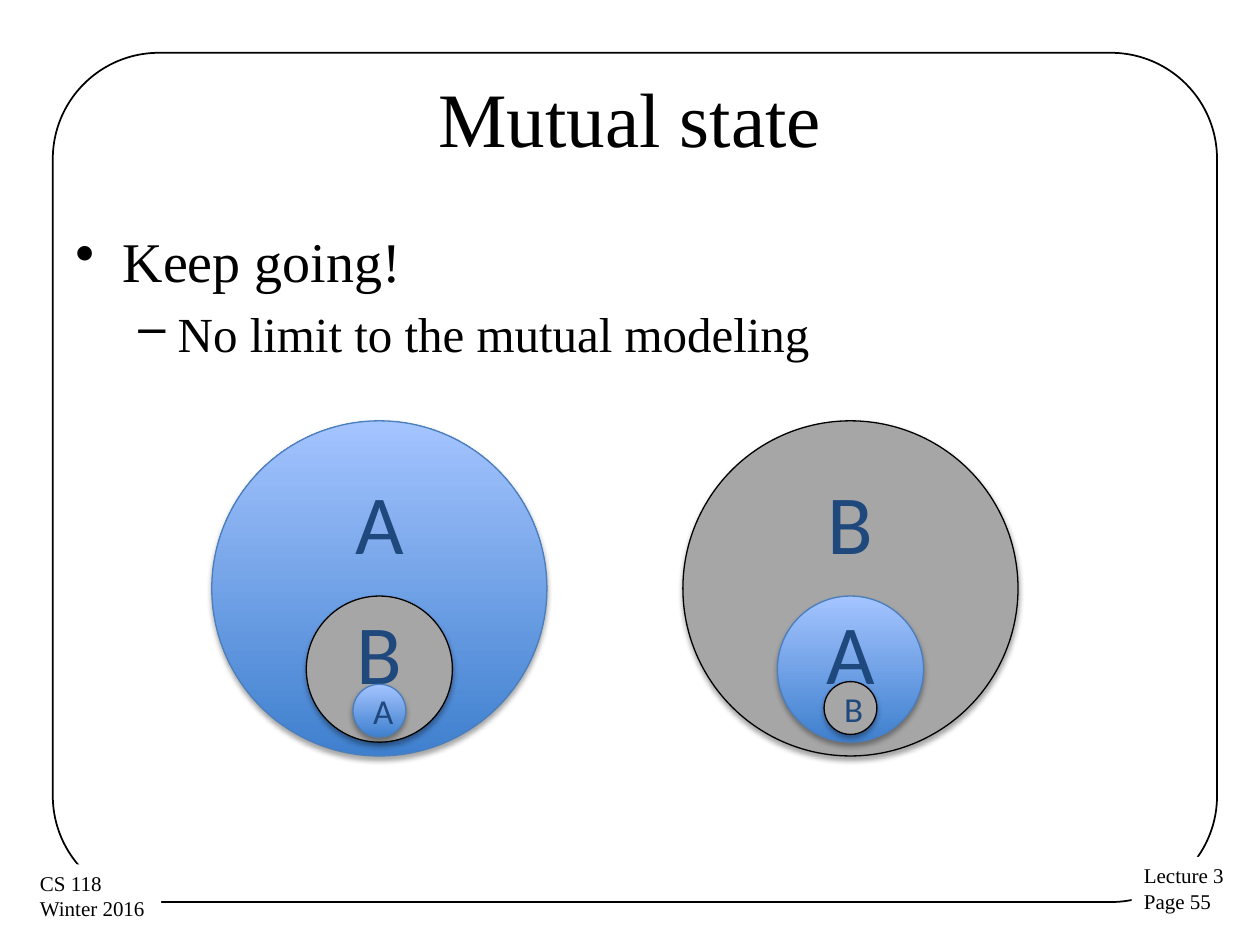
"""Build the "Mutual state" slide with nested models of A and B."""
import pptx
import pptx.util
import pptx.dml.color
import pptx.enum.shapes
import pptx.enum.text
import lxml.etree

Pt = pptx.util.Pt
Shapes = pptx.enum.shapes.MSO_SHAPE
Align = pptx.enum.text.PP_ALIGN
Anchor = pptx.enum.text.MSO_ANCHOR
NAMESPACE = "http://schemas.openxmlformats.org/drawingml/2006/main"

THEME = {
    "serif": "Times New Roman", "sans": "Calibri",
    "black": "000000", "white": "FFFFFF", "letter": "1F497D",
    "title": 44, "footer": 12,
    "A": {"fill": ("3F80CE", "A4C4FF"), "line": "4B7EBC"},
    "B": {"fill": ("A6A6A6",), "line": "000000"},
}
TITLE = "Mutual state"
BULLETS = [
    {"text": "Keep going!", "mark": "•", "size": 32, "left": 27, "hang": 27, "before": 0},
    {"text": "No limit to the mutual modeling", "mark": "–", "size": 28,
     "left": 58.5, "hang": 22.5, "before": 5.6},
]
FOOTERS = [
    (("Lecture 3", "Page 55"), (646.6, 489.6, 60.5, 36.7)),
    (("CS 118", "Winter 2016"), (15.8, 493.9, 76.3, 36.7)),
]
COLUMNS = [(216.8, "ABA"), (486, "BAB")]
LEVELS = [
    {"diameter": 191.5, "tops": (240.5, 240.5), "size": 48, "insets": (0, 77)},
    {"diameter": 83.5, "tops": (340.6, 340.6), "size": 48, "insets": (0, 21)},
    {"diameter": 30.2, "tops": (391, 389.5), "size": 20, "insets": (3.6, 3.6)},
]


def color(name):
    return pptx.dml.color.RGBColor.from_string(THEME.get(name, name))


def write(paragraph, text, size, font="serif", ink="black", align=Align.LEFT, before=0):
    paragraph.text = text
    paragraph.alignment = align
    paragraph.space_before = Pt(before)
    paragraph.font.size = Pt(size)
    paragraph.font.name = THEME[font]
    paragraph.font.color.rgb = color(ink)


def place(shape, left, top, width, height):
    shape.left, shape.top, shape.width, shape.height = map(Pt, (left, top, width, height))


def add_shape(slide, kind, box, fill=(), line=None, weight=0.75):
    shape = slide.shapes.add_shape(kind, *map(Pt, box))
    shape.shadow.inherit = False
    if len(fill) == 2:
        shape.fill.gradient()
        shape.fill.gradient_angle = 90
        for stop, position, name in zip(shape.fill.gradient_stops, (0, 1), fill):
            stop.position = position
            stop.color.rgb = color(name)
    elif fill:
        shape.fill.solid()
        shape.fill.fore_color.rgb = color(fill[0])
    else:
        shape.fill.background()
    if line:
        shape.line.color.rgb = color(line)
        shape.line.width = Pt(weight)
    else:
        shape.line.fill.background()
    return shape


def add_shadow(shape):
    effects = shape.element.spPr.find(f"{{{NAMESPACE}}}effectLst")
    effects.append(lxml.etree.fromstring(
        f'<a:outerShdw xmlns:a="{NAMESPACE}" blurRad="{Pt(3.1)}" dist="{Pt(1.8)}" '
        'dir="5400000" rotWithShape="0"><a:srgbClr val="000000">'
        '<a:alpha val="35000"/></a:srgbClr></a:outerShdw>'))


def add_bullet(paragraph, mark, left, hang):
    properties = paragraph._p.get_or_add_pPr()
    properties.set("marL", str(Pt(left)))
    properties.set("indent", str(-Pt(hang)))
    lxml.etree.SubElement(properties, f"{{{NAMESPACE}}}buChar", char=mark)


def add_frame(slide):
    frame = add_shape(slide, Shapes.ROUNDED_RECTANGLE, (30.2, 30.2, 665.3, 485.3),
                      line="black", weight=1)
    frame.adjustments[0] = 0.125
    for lines, box in FOOTERS:
        footer = add_shape(slide, Shapes.RECTANGLE, box, fill=("white",))
        text_frame = footer.text_frame
        text_frame.word_wrap = False
        text_frame.vertical_anchor = Anchor.TOP
        for index, line in enumerate(lines):
            paragraph = text_frame.add_paragraph() if index else text_frame.paragraphs[0]
            write(paragraph, line, THEME["footer"])


def add_text(slide):
    title = slide.shapes.title
    place(title, 36, 21.6, 648, 90)
    title.text_frame.vertical_anchor = Anchor.MIDDLE
    write(title.text_frame.paragraphs[0], TITLE, THEME["title"], align=Align.CENTER)
    body = slide.shapes.add_textbox(*map(Pt, (36, 126, 648, 356.4)))
    body.text_frame.word_wrap = True
    for index, item in enumerate(BULLETS):
        paragraph = body.text_frame.add_paragraph() if index else body.text_frame.paragraphs[0]
        paragraph.level = index
        add_bullet(paragraph, item["mark"], item["left"], item["hang"])
        write(paragraph, item["text"], item["size"], before=item["before"])


def add_circles(slide):
    for depth, level in enumerate(LEVELS):
        diameter = level["diameter"]
        for (center, letters), top in zip(COLUMNS, level["tops"]):
            letter = letters[depth]
            circle = add_shape(slide, Shapes.OVAL,
                               (center - diameter / 2, top, diameter, diameter), **THEME[letter])
            add_shadow(circle)
            text_frame = circle.text_frame
            text_frame.word_wrap = True
            text_frame.vertical_anchor = Anchor.MIDDLE
            text_frame.margin_top, text_frame.margin_bottom = map(Pt, level["insets"])
            write(text_frame.paragraphs[0], letter, level["size"], font="sans",
                  ink="letter", align=Align.CENTER)


def main():
    presentation = pptx.Presentation()
    presentation.slide_width, presentation.slide_height = Pt(720), Pt(540)
    slide = presentation.slides.add_slide(presentation.slide_layouts[5])
    add_frame(slide)
    add_text(slide)
    add_circles(slide)
    presentation.save("out.pptx")


if __name__ == "__main__":
    main()
